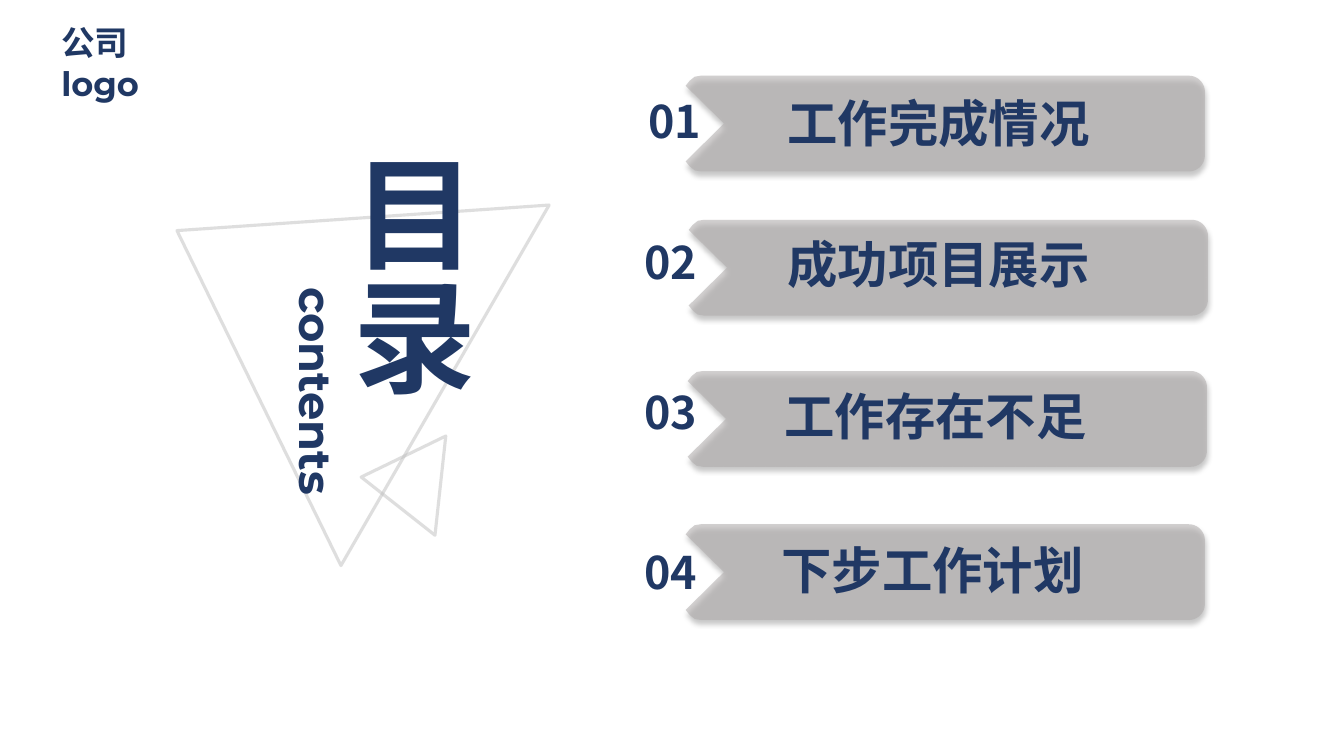
from math import cos, radians, sin

from lxml.etree import SubElement
from pptx import Presentation
from pptx.dml.color import RGBColor
from pptx.enum.shapes import MSO_SHAPE
from pptx.enum.text import MSO_ANCHOR, PP_ALIGN
from pptx.oxml.ns import qn
from pptx.util import Inches, Pt

NAVY = "203864"
SANS = "Noto Sans CJK SC"

# number, section, bar corner, number corner, section corner
ROWS = [
    ("01", "工作完成情况", (6.8, 0.75), (6.33, 0.88), (7.71, 0.86)),
    ("02", "成功项目展示", (6.83, 2.18), (6.29, 2.28), (7.71, 2.26)),
    ("03", "工作存在不足", (6.82, 3.68), (6.29, 3.77), (7.68, 3.77)),
    ("04", "下步工作计划", (6.8, 5.2), (6.29, 5.35), (7.65, 5.3)),
]


def paint(target, color, alpha=None):
    """Give a shape or line a solid colour, with opacity in percent."""
    target.fill.solid()
    target.fill.fore_color.rgb = RGBColor.from_string(color)
    if alpha:
        tint = target.fill._xPr.find(qn("a:solidFill"))[0]
        SubElement(tint, qn("a:alpha"), val=str(alpha * 1000))


def write(shape, text, size, font="Montserrat", vert=None):
    frame = shape.text_frame
    frame.word_wrap = True
    frame.vertical_anchor = MSO_ANCHOR.TOP
    if vert:
        frame._txBody.bodyPr.set("vert", vert)
    para = frame.paragraphs[0]
    para.alignment = PP_ALIGN.LEFT
    run = para.add_run()
    run.text = text
    run.font.size = Pt(size)
    run.font.bold = True
    run.font.name = font
    run.font.color.rgb = RGBColor.from_string(NAVY)
    SubElement(run.font._element, qn("a:ea"), typeface=SANS)


def add_text(slide, box, text, **form):
    write(slide.shapes.add_textbox(*map(Inches, box)), text, **form)


def add_title(slide, box, text, **form):
    """Fill the title placeholder and bring it to the front."""
    title = slide.shapes.title
    title.left, title.top, title.width, title.height = map(Inches, box)
    write(title, text, **form)
    frame = title.text_frame
    frame.margin_left, frame.margin_right = Inches(0.16), Inches(0.04)
    frame.margin_top = Inches(0.1)
    slide.shapes._spTree.append(title._element)


def add_triangle(slide, box, angle):
    shape = slide.shapes.add_shape(
        MSO_SHAPE.ISOSCELES_TRIANGLE, *map(Inches, box))
    shape.rotation = angle
    shape.shadow.inherit = False
    shape.fill.background()
    shape.line.width = Pt(2.25)
    paint(shape.line, "BFBFBF", 49)


def arc(x, y, radius, start):
    """Points of a clockwise quarter circle."""
    turns = [radians(start + step * 10) for step in range(10)]
    return [(x + radius * cos(t), y + radius * sin(t)) for t in turns]


def add_bar(slide, left, top):
    """Draw a rounded, notched bar on a diagonal and turn it level."""
    wide, high, curve, tilt = 5.15, 0.95, 0.16, 45
    points = [(0.04, 0.05), (0.09, 0.01), (0.15, 0)]
    points += arc(wide - curve, curve, curve, -90)
    points += arc(wide - curve, high - curve, curve, 0)
    points += [(x, high - y) for x, y in reversed(points[:3])]
    points += [(0, 0.85), (0.38, high / 2), (0, 0.1)]
    c, s = cos(radians(tilt)), sin(radians(tilt))
    spots = []
    for x, y in points:
        dx, dy = x - wide / 2, y - high / 2
        spots.append((Inches(left + wide / 2 + dx * c + dy * s),
                      Inches(top + high / 2 - dx * s + dy * c)))
    pen = slide.shapes.build_freeform(*spots[0])
    pen.add_line_segments(spots[1:], close=True)
    bar = pen.convert_to_shape()
    bar.rotation = tilt
    paint(bar, "AFABAB", 55)
    bar.line.fill.background()
    bar.shadow.inherit = False
    glow = SubElement(
        bar._element.spPr.find(qn("a:effectLst")), qn("a:outerShdw"),
        blurRad=str(Pt(4)), dist=str(Pt(3)), dir="5400000",
        algn="t", rotWithShape="0")
    shade = SubElement(glow, qn("a:srgbClr"), val="000000")
    SubElement(shade, qn("a:alpha"), val="40000")


def main():
    deck = Presentation()
    deck.slide_width, deck.slide_height = Inches(13.33), Inches(7.5)
    slide = deck.slides.add_slide(deck.slide_layouts[5])

    add_text(slide, (0.51, 0.17, 1.36, 0.91), "公司logo", size=24)
    add_triangle(slide, (1.02, 1.52, 4.13, 3.07), 300)
    add_triangle(slide, (3.48, 4.38, 0.99, 0.79), 276.2)
    add_title(slide, (3.17, 1.41, 1.68, 2.83), "目录", size=88, vert="eaVert")
    add_text(slide, (2.72, 2.75, 0.74, 2.55), "contents", size=32, vert="vert")

    for number, section, bar, mark, label in ROWS:
        add_bar(slide, *bar)
        add_text(slide, (*mark, 0.84, 0.64), number, size=32, font=SANS)
        add_text(slide, (*label, 3.38, 0.71), section, size=36)
    deck.save("out.pptx")


if __name__ == "__main__":
    main()
